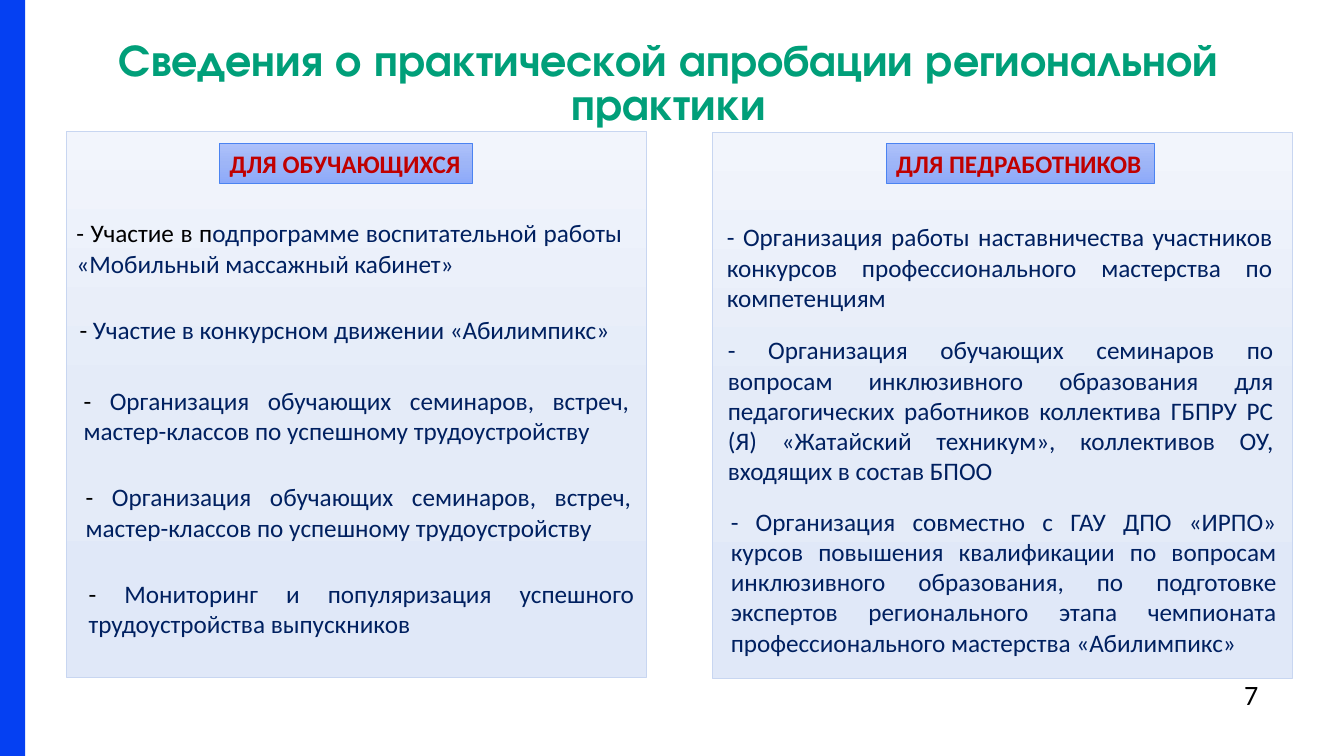
from copy import deepcopy

from pptx import Presentation
from pptx.dml.color import RGBColor
from pptx.enum.shapes import MSO_SHAPE
from pptx.enum.text import MSO_ANCHOR, PP_ALIGN
from pptx.oxml.ns import qn
from pptx.util import Inches, Pt

RECTANGLE = MSO_SHAPE.RECTANGLE
TOP = MSO_ANCHOR.TOP
LEFT, CENTER, JUSTIFY = PP_ALIGN.LEFT, PP_ALIGN.CENTER, PP_ALIGN.JUSTIFY

BLACK = RGBColor(0x00, 0x00, 0x00)
GREEN = RGBColor(0x00, 0x9F, 0x79)
BLUE = RGBColor(0x05, 0x40, 0xF2)
NAVY = RGBColor(0x00, 0x20, 0x60)
RED = RGBColor(0xC0, 0x00, 0x00)
PANEL_LINE = RGBColor(0xC8, 0xD6, 0xF1)
BADGE_LINE = RGBColor(0x4B, 0x83, 0xF1)
PANEL_FILL = (RGBColor(0xF2, 0xF5, 0xFC), RGBColor(0xE4, 0xEB, 0xF8),
              RGBColor(0xE0, 0xE8, 0xF8))
BADGE_FILL = (RGBColor(0xAD, 0xC1, 0xFA), RGBColor(0x9E, 0xB5, 0xF7),
              RGBColor(0x8C, 0xA9, 0xFA))

BODY_FONT = "Calibri"
TITLE_FONT = "TeX Gyre Adventor"

SEMINARS = ("Организация обучающих семинаров, встреч, мастер-классов "
            "по успешному трудоустройству")
# Each item: left and top within its panel, height, black lead, navy text
STUDENT_ITEMS = [
    (0, 0.81, 0.71, "- Участие в п",
     "одпрограмме воспитательной работы «Мобильный массажный кабинет»"),
    (0.03, 1.77, 0.4, "- ", "Участие в конкурсном движении «Абилимпикс»"),
    (0.07, 2.47, 0.71, "- ", SEMINARS),
    (0.09, 3.43, 0.71, "- ", SEMINARS),
    (0.12, 4.39, 0.71, "- ",
     "Мониторинг и популяризация успешного трудоустройства выпускников"),
]
STAFF_ITEMS = [
    (0.04, 0.84, 1.01, "",
     "- Организация работы наставничества участников конкурсов "
     "профессионального мастерства по компетенциям"),
    (0.05, 1.96, 1.62, "",
     "- Организация обучающих семинаров по вопросам инклюзивного образования "
     "для педагогических работников коллектива ГБПРУ РС (Я) «Жатайский "
     "техникум», коллективов ОУ, входящих в состав БПОО"),
    (0.08, 3.66, 1.62, "",
     "- Организация совместно с ГАУ ДПО «ИРПО» курсов повышения квалификации "
     "по вопросам инклюзивного образования, по подготовке экспертов "
     "регионального этапа чемпионата профессионального мастерства «Абилимпикс»"),
]


def write(box, spans, size=18, font=BODY_FONT, bold=False, align=LEFT,
          wrap=True, line_height=None):
    """Fill a box with one paragraph made of (text, colour) spans."""
    frame = box.text_frame
    frame.word_wrap = wrap
    frame.vertical_anchor = TOP
    para = frame.paragraphs[0]
    para.alignment = align
    if line_height:
        para.line_spacing = Pt(line_height)
    for text, color in spans:
        span = para.add_run()
        span.text = text
        span.font.name = font
        span.font.size = Pt(size)
        span.font.bold = bold
        span.font.color.rgb = color


def add_text(page, left, top, width, height, spans, **style):
    box = page.shapes.add_textbox(Inches(left), Inches(top),
                                  Inches(width), Inches(height))
    write(box, spans, **style)
    return box


def add_rectangle(page, left, top, width, height):
    box = page.shapes.add_shape(RECTANGLE, Inches(left), Inches(top),
                                Inches(width), Inches(height))
    box.shadow.inherit = False
    return box


def add_gradient_box(page, left, top, width, height, colors, line):
    box = add_rectangle(page, left, top, width, height)
    box.fill.gradient()
    box.fill.gradient_angle = 270
    # A third stop is needed between the two default ones
    first = box._element.spPr.find(".//" + qn("a:gs"))
    first.addnext(deepcopy(first))
    for index, (stop, color) in enumerate(zip(box.fill.gradient_stops, colors)):
        stop.position = index / 2
        stop.color.rgb = color
    box.line.color.rgb = line
    box.line.width = Pt(0.5)
    return box


def add_title(page, left, top, width, height):
    box = add_text(page, left, top, width, height,
                   [("Сведения о практической апробации региональной практики",
                     GREEN)],
                   size=32, font=TITLE_FONT, bold=True, align=CENTER,
                   line_height=32)
    frame = box.text_frame
    frame.margin_left = frame.margin_right = 0
    frame.margin_top = frame.margin_bottom = 0


def add_panel(page, left, top, heading, heading_left, heading_width, items):
    """Gradient panel with a heading badge and a column of statements."""
    add_gradient_box(page, left, top, 5.75, 5.42, PANEL_FILL, PANEL_LINE)
    badge = add_gradient_box(page, left + heading_left, 1.42, heading_width,
                             0.4, BADGE_FILL, BADGE_LINE)
    write(badge, [(heading, RED)], bold=True, wrap=False)
    for item_left, item_top, height, lead, text in items:
        spans = [(lead, BLACK)] if lead else []
        add_text(page, left + item_left, top + item_top, 5.61, height,
                 spans + [(text, NAVY)], align=JUSTIFY)


def main():
    deck = Presentation()
    deck.slide_width, deck.slide_height = Inches(13.33), Inches(7.5)
    page = deck.slides.add_slide(deck.slide_layouts[6])

    # Side stripe
    stripe = add_rectangle(page, 0, 0, 0.25, 7.5)
    stripe.fill.solid()
    stripe.fill.fore_color.rgb = BLUE
    stripe.line.fill.background()

    # Panels, title and page number
    add_panel(page, 0.66, 1.3, "ДЛЯ ОБУЧАЮЩИХСЯ", 1.52, 2.51, STUDENT_ITEMS)
    add_panel(page, 7.07, 1.31, "ДЛЯ ПЕДРАБОТНИКОВ", 1.72, 2.66, STAFF_ITEMS)
    add_title(page, 0.67, 0.4, 11.93, 0.9)
    add_text(page, 12.24, 6.67, 0.53, 0.44, [("7", BLACK)], size=20, wrap=False)

    deck.save("out.pptx")


if __name__ == "__main__":
    main()
